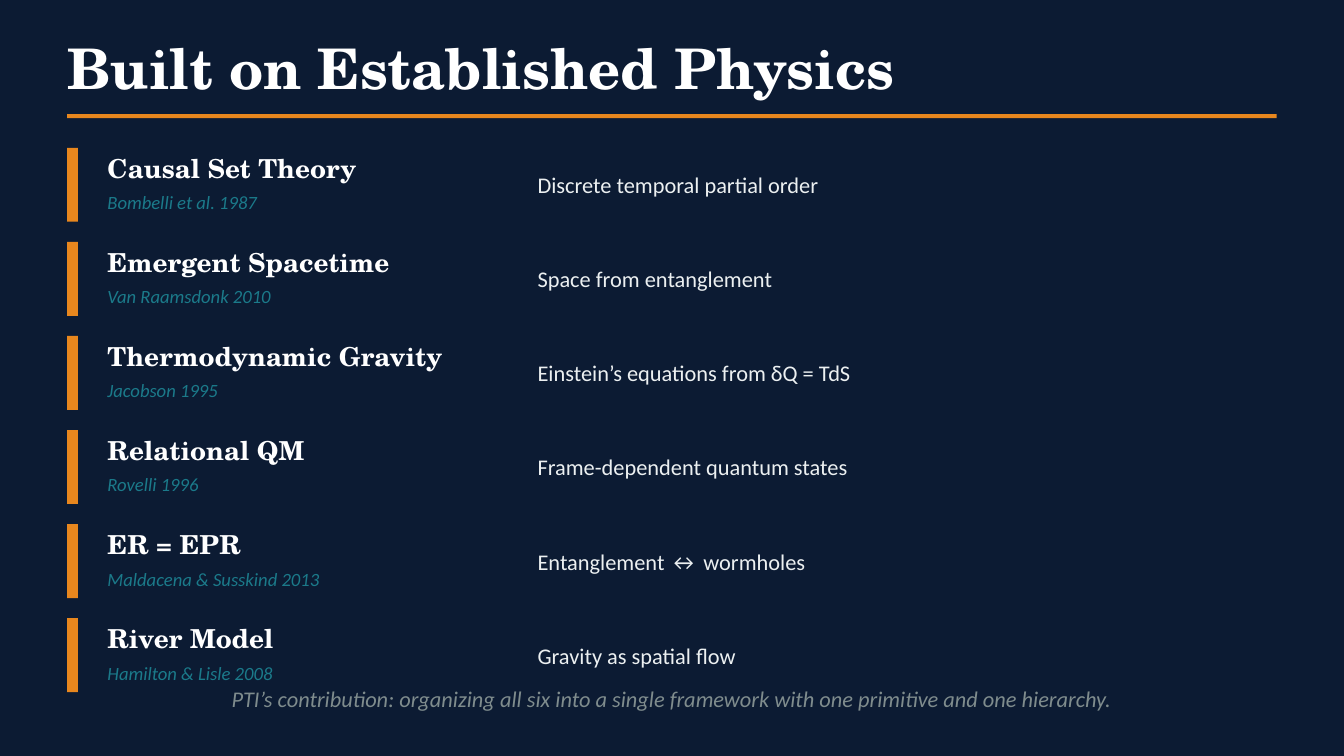
"""Build the slide on the physics that the framework rests on."""
from pptx import Presentation
from pptx.dml.color import RGBColor
from pptx.enum import shapes, text
from pptx.util import Pt

NAVY = RGBColor(0x0C, 0x1B, 0x33)
ORANGE = RGBColor(0xE8, 0x87, 0x1E)
WHITE = RGBColor(0xFF, 0xFF, 0xFF)
TEAL = RGBColor(0x1B, 0x7A, 0x8A)
PALE = RGBColor(0xEC, 0xF0, 0xF1)
GRAY = RGBColor(0x7F, 0x8C, 0x8D)
SERIF, SANS = "TeX Gyre Schola", "Calibri"
LEFT, INDENT, RIGHT = 36, 57.6, 288
TOP, PITCH, HEIGHT = 79.2, 50.4, 39.6

ROWS = [
    ("Causal Set Theory", "Bombelli et al. 1987", "Discrete temporal partial order"),
    ("Emergent Spacetime", "Van Raamsdonk 2010", "Space from entanglement"),
    ("Thermodynamic Gravity", "Jacobson 1995", "Einstein’s equations from δQ = TdS"),
    ("Relational QM", "Rovelli 1996", "Frame-dependent quantum states"),
    ("ER = EPR", "Maldacena & Susskind 2013", "Entanglement ↔ wormholes"),
    ("River Model", "Hamilton & Lisle 2008", "Gravity as spatial flow"),
]


def write(shape, words, face, size, color, bold=False, italic=False,
          align=text.PP_ALIGN.LEFT):
    """Put one styled run in a shape, without margins."""
    frame = shape.text_frame
    frame.word_wrap = True
    frame.auto_size = text.MSO_AUTO_SIZE.NONE
    frame.vertical_anchor = text.MSO_ANCHOR.MIDDLE
    frame.margin_left = frame.margin_right = Pt(0)
    frame.margin_top = frame.margin_bottom = Pt(0)
    para = frame.paragraphs[0]
    para.alignment = align
    run = para.add_run()
    run.text = words
    font = run.font
    font.name, font.size, font.bold, font.italic = face, Pt(size), bold, italic
    font.color.rgb = color


def add_title(slide, words):
    """Move and fill the title placeholder."""
    title = slide.shapes.title
    title.left, title.top = Pt(LEFT), Pt(14.4)
    title.width, title.height = Pt(648), Pt(43.2)
    write(title, words, SERIF, 30, WHITE, bold=True)


def add_bar(slide, x, y, w, h):
    """Draw a plain orange bar."""
    bar = slide.shapes.add_shape(
        shapes.MSO_SHAPE.RECTANGLE, Pt(x), Pt(y), Pt(w), Pt(h))
    bar.shadow.inherit = False
    bar.fill.solid()
    bar.fill.fore_color.rgb = ORANGE
    bar.line.fill.background()


def add_label(slide, x, y, w, h, *style, **flags):
    """Add a text box with one styled line."""
    box = slide.shapes.add_textbox(Pt(x), Pt(y), Pt(w), Pt(h))
    write(box, *style, **flags)


def add_row(slide, y, name, source, idea):
    """Add one theory with its source and its main idea."""
    add_bar(slide, LEFT, y, 5.76, HEIGHT)
    add_label(slide, INDENT, y, 201.6, 21.6, name, SERIF, 14, WHITE, bold=True)
    add_label(slide, INDENT, y + 20.16, 201.6, 18, source, SANS, 10, TEAL,
              italic=True)
    add_label(slide, RIGHT, y, 396, HEIGHT, idea, SANS, 12, PALE)


def main():
    """Build and save the deck."""
    deck = Presentation()
    deck.slide_width, deck.slide_height = Pt(720), Pt(405)
    slide = deck.slides.add_slide(deck.slide_layouts[5])
    fill = slide.background.fill
    fill.solid()
    fill.fore_color.rgb = NAVY
    add_title(slide, "Built on Established Physics")
    add_bar(slide, LEFT, 61.2, 648, 2.16)
    for i, row in enumerate(ROWS):
        add_row(slide, TOP + i * PITCH, *row)
    add_label(slide, INDENT, 360, 604.8, 28.8,
              "PTI’s contribution: organizing all six into a single framework "
              "with one primitive and one hierarchy.",
              SANS, 12, GRAY, italic=True, align=text.PP_ALIGN.CENTER)
    deck.save("out.pptx")


if __name__ == "__main__":
    main()
